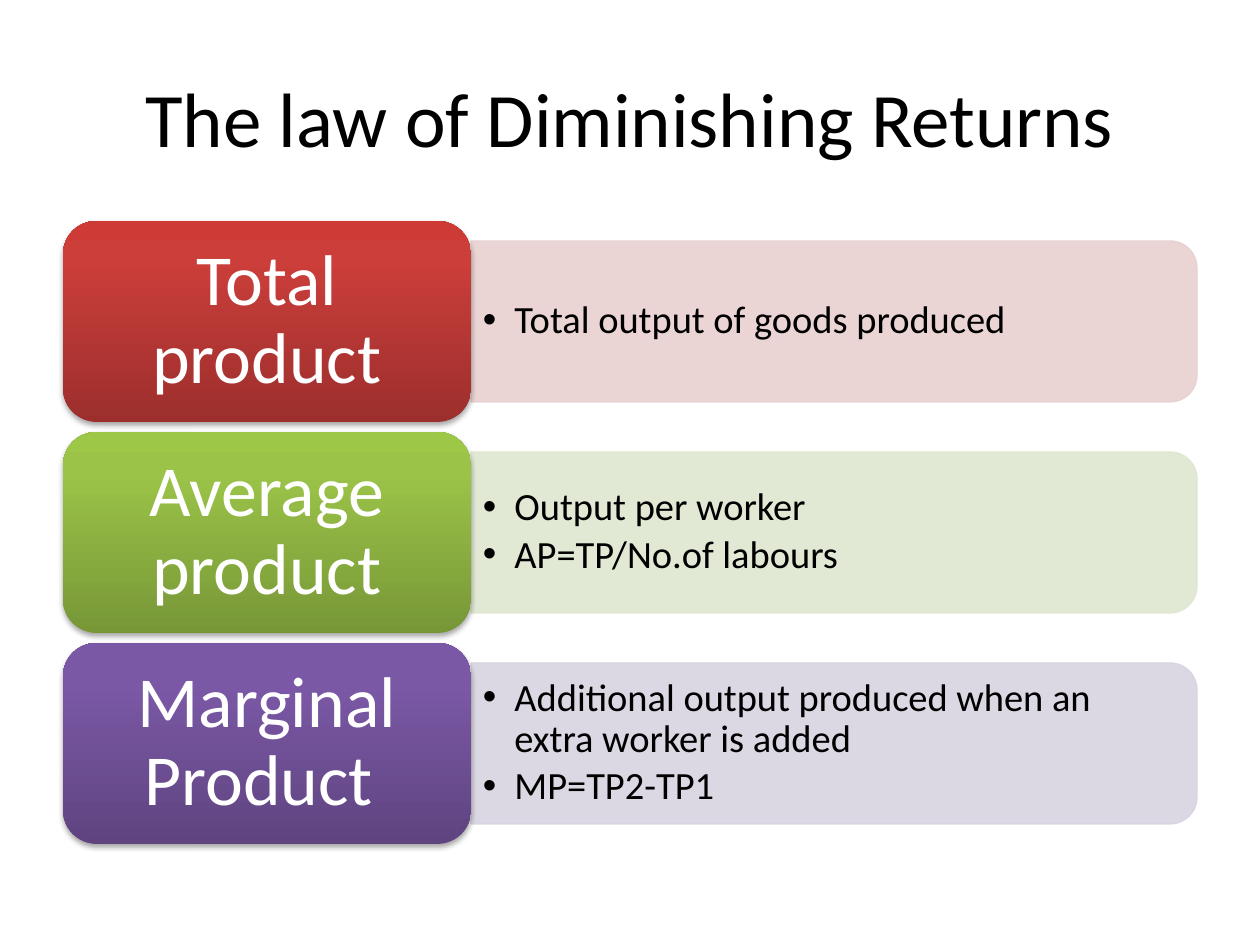
import copy

import lxml.etree
import pptx
import pptx.dml.color
import pptx.enum.shapes
import pptx.enum.text
import pptx.oxml.ns
import pptx.util

PX = 914400 / 126
FONT = "Calibri"
COLORS = {"black": "000000", "white": "FFFFFF"}
SHAPES = pptx.enum.shapes.MSO_SHAPE
MIDDLE = pptx.enum.text.MSO_ANCHOR.MIDDLE
CENTER = pptx.enum.text.PP_ALIGN.CENTER
rgb = pptx.dml.color.RGBColor.from_string
qn = pptx.oxml.ns.qn

# panel colour, label gradient from bottom to top, label text, bullets
ROWS = [
    ("E8D0D0", ("9C2F2D", "CB3E3A", "CE3B37"), "Total product",
     ["Total output of goods produced"]),
    ("DEE7D1", ("779737", "9BC348", "9DC746"), "Average product",
     ["Output per worker", "AP=TP/No.of labours"]),
    ("D8D3E0", ("5F4480", "7B58A6", "7C57A8"), "Marginal Product ",
     ["Additional output produced when an extra worker is added", "MP=TP2-TP1"]),
]
TOP, PITCH = 221, 211
LEFT, LABEL_W, LABEL_H = 63, 408, 201
PANEL_W, PANEL_H = 726, 161


def px(*lengths):
    return [round(length * PX) for length in lengths]


def style(para, size, color):
    para.line_spacing = 0.9
    para.font.name = FONT
    para.font.size = pptx.util.Pt(size)
    para.font.color.rgb = rgb(COLORS[color])


deck = pptx.Presentation()
deck.slide_width, deck.slide_height = px(1260, 945)
page = deck.slides.add_slide(deck.slide_layouts[5])

# Title
title = page.shapes.title
title.left, title.top, title.width, title.height = px(63, 38, 1134, 157)
title.text_frame.text = "The law of Diminishing Returns"
title.text_frame.vertical_anchor = MIDDLE
heading = title.text_frame.paragraphs[0]
heading.alignment = CENTER
style(heading, 44, "black")
heading.line_spacing = 1.0

for row, (tint, gradient, name, points) in enumerate(ROWS):
    top = TOP + row * PITCH
    middle = top + LABEL_H / 2
    panel_left = LEFT + LABEL_W

    # Pale panel, turned so that its rounded corners face right
    panel = page.shapes.add_shape(
        SHAPES.ROUND_2_SAME_RECTANGLE,
        *px(panel_left + (PANEL_W - PANEL_H) / 2, middle - PANEL_W / 2, PANEL_H, PANEL_W))
    panel.rotation = 90
    panel.shadow.inherit = False
    panel.fill.solid()
    panel.fill.fore_color.rgb = rgb(tint)
    panel.line.color.rgb = rgb(tint)
    panel.line.width = pptx.util.Pt(0.75)
    for color in panel._element.spPr.iter(qn("a:srgbClr")):
        lxml.etree.SubElement(color, qn("a:alpha"), val="90000")

    # Bullets over the panel
    box = page.shapes.add_textbox(*px(panel_left, middle - 73, 718, 145))
    frame = box.text_frame
    frame.word_wrap = True
    frame.vertical_anchor = MIDDLE
    frame.margin_left, frame.margin_right, frame.margin_top, frame.margin_bottom = px(12, 12, 6, 6)
    frame.text = "\n".join(points)
    for para in frame.paragraphs:
        para.level = 1
        para.space_after = pptx.util.Pt(3.3)
        props = para._p.get_or_add_pPr()
        props.set("marL", "228600")
        props.set("indent", "-228600")
        lxml.etree.SubElement(props, qn("a:buFont"), typeface="Arial")
        lxml.etree.SubElement(props, qn("a:buChar"), char="•")
        style(para, 22, "black")

    # Label with gradient and soft shadow
    label = page.shapes.add_shape(SHAPES.ROUNDED_RECTANGLE, *px(LEFT, top, LABEL_W, LABEL_H))
    label.line.fill.background()
    label.fill.gradient()
    label.fill.gradient_angle = 90
    stop_list = label._element.spPr.find(".//" + qn("a:gsLst"))
    stop_list.append(copy.deepcopy(stop_list[-1]))
    for stop, position, color in zip(label.fill.gradient_stops, (0, 0.8, 1), gradient):
        stop.position = position
        stop.color.rgb = rgb(color)
    label.shadow.inherit = False
    effects = label._element.spPr.find(qn("a:effectLst"))
    shadow = lxml.etree.SubElement(effects, qn("a:outerShdw"), blurRad="40000", dist="23000",
                                   dir="5400000", rotWithShape="0")
    shade = lxml.etree.SubElement(shadow, qn("a:srgbClr"), val=COLORS["black"])
    lxml.etree.SubElement(shade, qn("a:alpha"), val="35000")

    frame = label.text_frame
    frame.word_wrap = True
    frame.vertical_anchor = MIDDLE
    frame.margin_left, frame.margin_right, frame.margin_top, frame.margin_bottom = px(31, 31, 21, 21)
    frame.text = name
    frame.paragraphs[0].alignment = CENTER
    style(frame.paragraphs[0], 41, "white")

deck.save("out.pptx")
